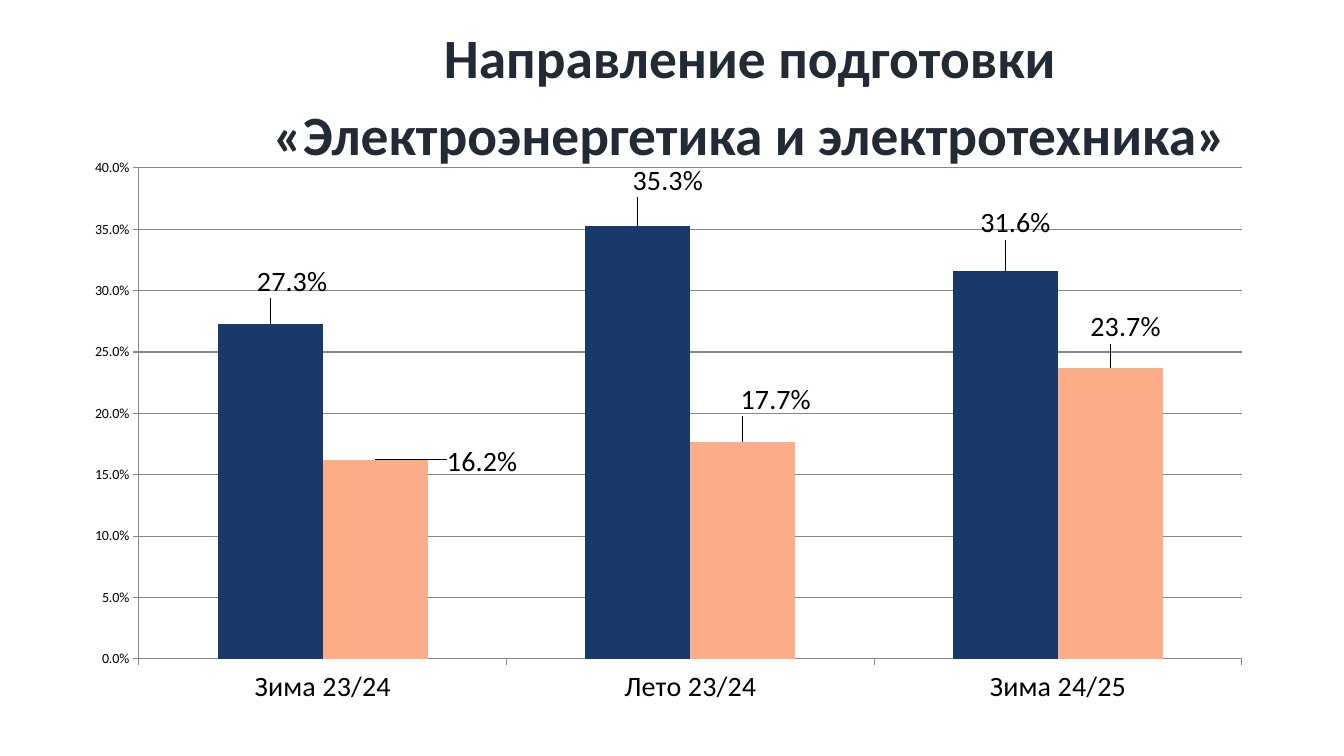
import pptx
import pptx.chart.data
import pptx.dml.color
import pptx.enum.chart
import pptx.enum.text
import pptx.oxml
import pptx.oxml.ns
import pptx.util

EMU_PER_PX = 12192000 / 1344
FONT = "Calibri"
COLORS = {
    "title": "222A35",
    "text": "000000",
    "line": "888888",
    "navy": "1A396B",
    "peach": "FBAD87",
}
CHART_BOX = (72, 148, 1194, 566)
PLOT_BOX = (139, 168, 1103, 491)
SESSIONS = ["Зима 23/24", "Лето 23/24", "Зима 24/25"]
SERIES = [
    ("Series 1", "navy", [0.273, 0.353, 0.316], [(22, -21), (30, -24), (10, -27)]),
    ("Series 2", "peach", [0.162, 0.177, 0.237], [(107, 23), (33, -21), (15, -20)]),
]


def px(length):
    return pptx.util.Emu(round(length * EMU_PER_PX))


def color(name):
    return pptx.dml.color.RGBColor.from_string(COLORS[name])


def style_font(font, size, color_name="text", bold=False):
    font.name = FONT
    font.size = pptx.util.Pt(size)
    font.bold = bold
    font.color.rgb = color(color_name)


def style_line(line):
    line.color.rgb = color("line")
    line.width = pptx.util.Pt(0.75)


def manual_layout(**settings):
    items = "".join(f'<c:{key} val="{value}"/>' for key, value in settings.items())
    return pptx.oxml.parse_xml(
        f'<c:layout {pptx.oxml.ns.nsdecls("c")}>'
        f"<c:manualLayout>{items}</c:manualLayout></c:layout>"
    )


def add_title(slide, text):
    title = slide.shapes.title
    title.left, title.top, title.width, title.height = map(px, (248, 65, 1004, 50))
    frame = title.text_frame
    frame.word_wrap = True
    frame.auto_size = pptx.enum.text.MSO_AUTO_SIZE.NONE
    frame.vertical_anchor = pptx.enum.text.MSO_ANCHOR.MIDDLE
    frame.text = text
    paragraph = frame.paragraphs[0]
    paragraph.alignment = pptx.enum.text.PP_ALIGN.CENTER
    paragraph.line_spacing = 1.15
    paragraph.space_after = pptx.util.Pt(10)
    style_font(paragraph.font, 39.6, "title", True)


def style_axis(axis, size):
    axis.major_tick_mark = pptx.enum.chart.XL_TICK_MARK.OUTSIDE
    axis.minor_tick_mark = pptx.enum.chart.XL_TICK_MARK.NONE
    style_font(axis.tick_labels.font, size)
    style_line(axis.format.line)


def place_plot(chart):
    x, y, width, height = PLOT_BOX
    left, top, chart_width, chart_height = CHART_BOX
    plot_area = chart.element.xpath(".//c:plotArea")[0]
    for layout in plot_area.xpath("./c:layout"):
        plot_area.remove(layout)
    plot_area.insert(0, manual_layout(
        layoutTarget="inner", xMode="edge", yMode="edge",
        x=round((x - left) / chart_width, 4),
        y=round((y - top) / chart_height, 4),
        w=round(width / chart_width, 4),
        h=round(height / chart_height, 4),
    ))


def style_series(series, color_name, offsets):
    series.format.fill.solid()
    series.format.fill.fore_color.rgb = color(color_name)
    labels = series.data_labels
    labels.show_value = True
    labels.number_format = "0.0%"
    labels.number_format_is_linked = False
    style_font(labels.font, 20)
    for index in range(len(offsets)):
        label = series.points[index].data_label
        style_font(label.font, 20)
        label.position = pptx.enum.chart.XL_LABEL_POSITION.OUTSIDE_END


def shift_labels(chart):
    offsets = [offset for entry in SERIES for offset in entry[3]]
    for label, (right, down) in zip(chart.element.xpath(".//c:dLbl"), offsets):
        label.insert(1, manual_layout(
            x=round(right / CHART_BOX[2], 4), y=round(down / CHART_BOX[3], 4)
        ))


def add_column_chart(slide):
    data = pptx.chart.data.CategoryChartData(number_format="0.0%")
    data.categories = SESSIONS
    for name, _, values, _ in SERIES:
        data.add_series(name, values)
    chart = slide.shapes.add_chart(
        pptx.enum.chart.XL_CHART_TYPE.COLUMN_CLUSTERED, *map(px, CHART_BOX), data
    ).chart
    chart.has_legend = False
    chart.has_title = False
    style_font(chart.font, 10)
    style_axis(chart.category_axis, 20)
    value_axis = chart.value_axis
    style_axis(value_axis, 10)
    value_axis.minimum_scale = 0
    value_axis.maximum_scale = 0.4
    value_axis.major_unit = 0.05
    value_axis.tick_labels.number_format = "0.0%"
    value_axis.tick_labels.number_format_is_linked = False
    value_axis.has_major_gridlines = True
    style_line(value_axis.major_gridlines.format.line)
    plot = chart.plots[0]
    plot.gap_width = 150
    plot.overlap = 0
    plot.vary_by_categories = False
    for series, (_, color_name, _, offsets) in zip(plot.series, SERIES):
        style_series(series, color_name, offsets)
    place_plot(chart)
    shift_labels(chart)


def main():
    presentation = pptx.Presentation()
    presentation.slide_width = px(1344)
    presentation.slide_height = px(756)
    slide = presentation.slides.add_slide(presentation.slide_layouts[5])
    add_title(slide, "Направление подготовки «Электроэнергетика и электротехника»")
    add_column_chart(slide)
    presentation.save("out.pptx")


if __name__ == "__main__":
    main()
